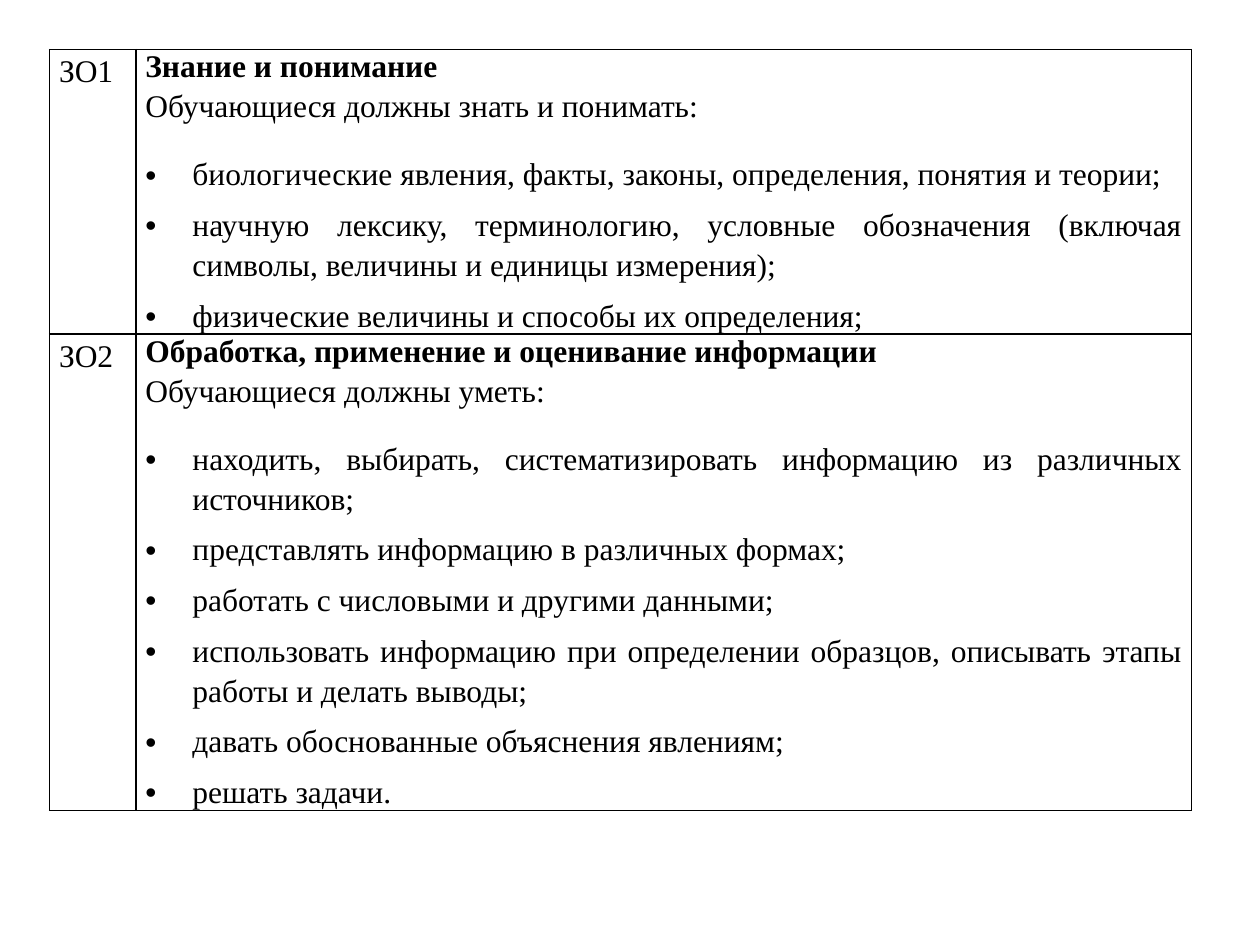
from lxml import etree
from pptx import Presentation
from pptx.dml.color import RGBColor
from pptx.enum import text
from pptx.oxml import ns
from pptx.util import Cm, Pt

FONT = "Times New Roman"
BLACK = "000000"
OBJECTIVES = [
    ("ЗO1", "Знание и понимание", "Обучающиеся должны знать и понимать:", [
        "биологические явления, факты, законы, определения, понятия и теории;",
        "научную лексику, терминологию, условные обозначения (включая символы, величины и единицы измерения);",
        "физические величины и способы их определения;",
    ]),
    ("ЗO2", "Обработка, применение и оценивание информации", "Обучающиеся должны уметь:", [
        "находить, выбирать, систематизировать информацию из различных источников;",
        "представлять информацию в различных формах;",
        "работать с числовыми и другими данными;",
        "использовать информацию при определении образцов, описывать этапы работы и делать выводы;",
        "давать обоснованные объяснения явлениям;",
        "решать задачи.",
    ]),
]
COLUMN_WIDTHS = [Cm(1.74), Cm(21.28)]
ROW_HEIGHTS = [Cm(5.56), Cm(9.32)]


def color(value):
    return RGBColor.from_string(value)


def add_paragraph(frame, words, bold=False, before=0, after=0, spacing=1.15):
    first = frame.paragraphs[0]
    paragraph = frame.add_paragraph() if first.runs else first
    paragraph.line_spacing = spacing
    paragraph.space_before = Pt(before)
    paragraph.space_after = Pt(after)
    run = paragraph.add_run()
    run.text = words
    run.font.name = FONT
    run.font.size = Pt(18)
    run.font.bold = bold
    run.font.color.rgb = color(BLACK)
    return paragraph


def add_bullet(frame, words):
    paragraph = add_paragraph(frame, words, before=6)
    paragraph.alignment = text.PP_ALIGN.JUSTIFY
    properties = paragraph._p.get_or_add_pPr()
    indent = Cm(0.95)
    properties.set("marL", str(indent))
    properties.set("indent", str(-indent))
    etree.SubElement(properties, ns.qn("a:buFont"), typeface="Arial")
    etree.SubElement(properties, ns.qn("a:buChar"), char="•")


def add_borders(cell):
    properties = cell._tc.get_or_add_tcPr()
    for position, side in enumerate(("lnL", "lnR", "lnT", "lnB")):
        line = etree.Element(ns.qn(f"a:{side}"), w=str(Pt(1)))
        fill = etree.SubElement(line, ns.qn("a:solidFill"))
        etree.SubElement(fill, ns.qn("a:srgbClr"), val=BLACK)
        properties.insert(position, line)


def format_cell(cell):
    cell.margin_left = cell.margin_right = Cm(0.19)
    cell.margin_top = cell.margin_bottom = 0
    cell.fill.background()
    add_borders(cell)


def add_objectives_table(slide):
    shape = slide.shapes.add_table(
        len(OBJECTIVES), len(COLUMN_WIDTHS), Cm(1), Cm(1), sum(COLUMN_WIDTHS), sum(ROW_HEIGHTS))
    table = shape.table
    table.first_row = False
    table.horz_banding = False
    for column, width in zip(table.columns, COLUMN_WIDTHS):
        column.width = width
    for row, height, objective in zip(table.rows, ROW_HEIGHTS, OBJECTIVES):
        row.height = height
        code, heading, introduction, skills = objective
        code_cell, content_cell = row.cells
        format_cell(code_cell)
        format_cell(content_cell)
        add_paragraph(code_cell.text_frame, code, after=10)
        frame = content_cell.text_frame
        add_paragraph(frame, heading, bold=True, before=12, spacing=1.0)
        add_paragraph(frame, introduction, after=10)
        for skill in skills:
            add_bullet(frame, skill)
    shape.height = Cm(16.41)


def main():
    presentation = Presentation()
    presentation.slide_width = Cm(25.4)
    presentation.slide_height = Cm(19.05)
    slide = presentation.slides.add_slide(presentation.slide_layouts[6])
    add_objectives_table(slide)
    presentation.save("out.pptx")


if __name__ == "__main__":
    main()
